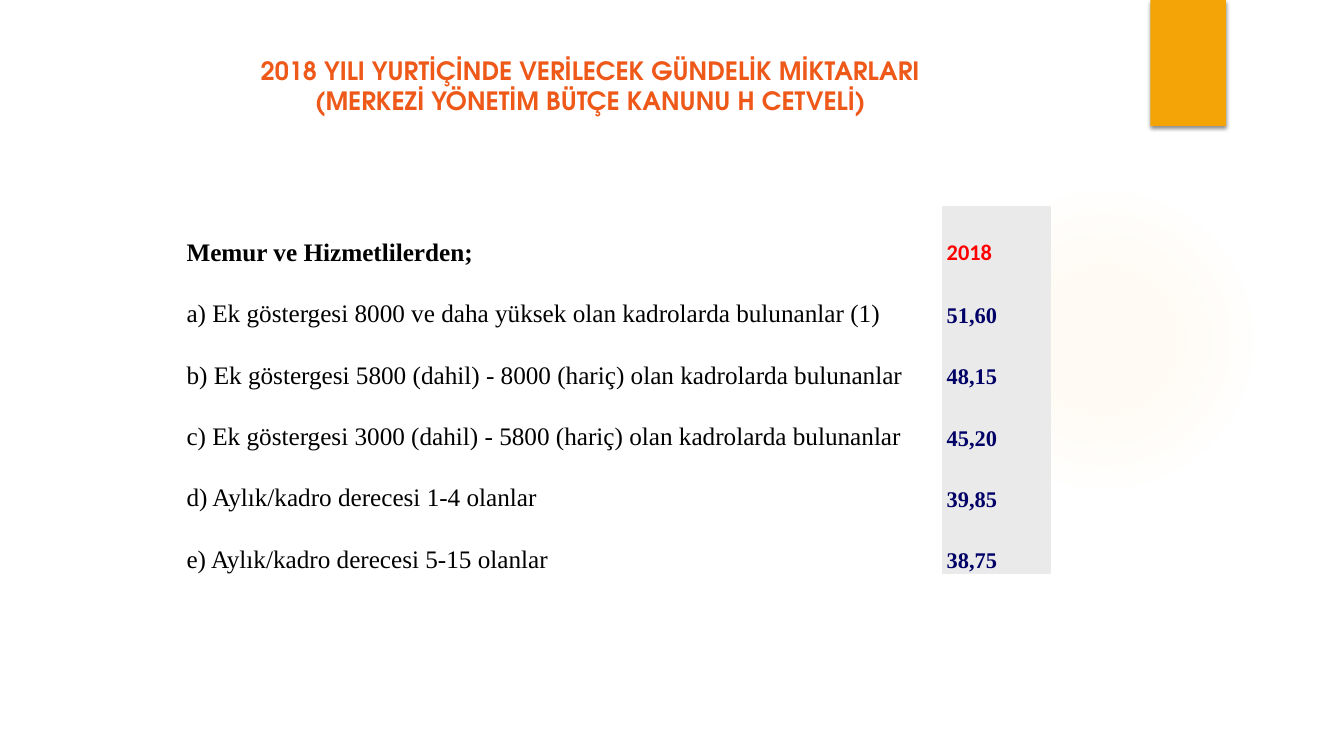
import pptx
import pptx.util
import pptx.dml.color
import pptx.enum.shapes
import pptx.enum.text
import pptx.oxml
import pptx.oxml.ns

Inches = pptx.util.Inches
Pt = pptx.util.Pt
MSO_SHAPE = pptx.enum.shapes.MSO_SHAPE
ANCHOR = pptx.enum.text.MSO_ANCHOR
NS = pptx.oxml.ns.nsdecls("a")
COLORS = {
    "title": "EE5818",
    "ribbon": "F5A408",
    "glow": "FAC96A",
    "band": "EAEAEA",
    "label": "000000",
    "year": "FF0000",
    "amount": "000066",
    "shadow": "000000",
}
NO_STYLE = "{2D5ABB26-0587-4C30-8999-92F81FD0307C}"


def rgb(name):
    return pptx.dml.color.RGBColor.from_string(COLORS[name])


def set_font(paragraph, face, size, color, bold):
    paragraph.font.name = face
    paragraph.font.size = Pt(size)
    paragraph.font.bold = bold
    paragraph.font.color.rgb = rgb(color)


deck = pptx.Presentation()
deck.slide_width = Inches(13.33)
deck.slide_height = Inches(7.5)
slide = deck.slides.add_slide(deck.slide_layouts[5])

glow = slide.shapes.add_shape(MSO_SHAPE.OVAL, Inches(9.41), Inches(1.83), Inches(3.08), Inches(3.08))
glow.shadow.inherit = False
glow.line.fill.background()
stops = "".join(
    f'<a:gs pos="{position * 1000}"><a:srgbClr val="{COLORS["glow"]}">'
    f'<a:alpha val="{opacity * 1000}"/></a:srgbClr></a:gs>'
    for position, opacity in [(0, 7), (36, 6), (69, 0)]
)
glow_fill = pptx.oxml.parse_xml(
    f'<a:gradFill {NS} rotWithShape="1"><a:gsLst>{stops}</a:gsLst><a:path path="circle">'
    '<a:fillToRect l="50000" t="50000" r="50000" b="50000"/></a:path></a:gradFill>'
)
glow.element.spPr.find(pptx.oxml.ns.qn("a:prstGeom")).addnext(glow_fill)

ribbon = slide.shapes.add_shape(MSO_SHAPE.RECTANGLE, Inches(11.41), 0, Inches(0.75), Inches(1.25))
ribbon.shadow.inherit = False
ribbon.fill.solid()
ribbon.fill.fore_color.rgb = rgb("ribbon")
ribbon.line.fill.background()
ribbon_shadow = pptx.oxml.parse_xml(
    f'<a:outerShdw {NS} blurRad="{Pt(3)}" dist="{Pt(2)}" dir="5400000" rotWithShape="0">'
    f'<a:srgbClr val="{COLORS["shadow"]}"><a:alpha val="45000"/></a:srgbClr></a:outerShdw>'
)
ribbon.element.spPr.find(pptx.oxml.ns.qn("a:effectLst")).append(ribbon_shadow)

title = slide.shapes.title
title.left, title.top, title.width, title.height = Inches(0.71), Inches(0.5), Inches(10.29), Inches(0.84)
title.text_frame.text = (
    "2018 YILI YURTİÇİNDE VERİLECEK GÜNDELİK MİKTARLARI\v"
    "(MERKEZİ YÖNETİM BÜTÇE KANUNU H CETVELİ)"
)
title.text_frame.word_wrap = True
title.text_frame.auto_size = pptx.enum.text.MSO_AUTO_SIZE.NONE
title.text_frame.vertical_anchor = ANCHOR.TOP
heading = title.text_frame.paragraphs[0]
heading.alignment = pptx.enum.text.PP_ALIGN.CENTER
set_font(heading, "TeX Gyre Adventor", 18, "title", True)

allowances = [
    ("Memur ve Hizmetlilerden;", "2018"),
    ("a) Ek göstergesi 8000 ve daha yüksek olan kadrolarda bulunanlar (1)", "51,60"),
    ("b) Ek göstergesi 5800 (dahil) - 8000 (hariç) olan kadrolarda bulunanlar", "48,15"),
    ("c) Ek göstergesi 3000 (dahil) - 5800 (hariç) olan kadrolarda bulunanlar", "45,20"),
    ("d) Aylık/kadro derecesi 1-4 olanlar", "39,85"),
    ("e) Aylık/kadro derecesi 5-15 olanlar", "38,75"),
]
allowance_table = slide.shapes.add_table(
    len(allowances), 2, Inches(1.8), Inches(2.04), Inches(8.62), Inches(3.65)
).table
allowance_table.first_row = False
allowance_table.horz_banding = False
allowance_table._tbl.tblPr.find(pptx.oxml.ns.qn("a:tableStyleId")).text = NO_STYLE
allowance_table.columns[0].width = Inches(7.54)
allowance_table.columns[1].width = Inches(1.08)

for row, entry in enumerate(allowances):
    for column, text in enumerate(entry):
        cell = allowance_table.cell(row, column)
        cell.text = text
        cell.vertical_anchor = ANCHOR.BOTTOM
        cell.margin_left = cell.margin_right = Inches(0.05)
        cell.margin_top = cell.margin_bottom = 0
        paragraph = cell.text_frame.paragraphs[0]
        paragraph.line_spacing = 1.07
        if column == 0:
            cell.fill.background()
            set_font(paragraph, "Times New Roman", 18, "label", row == 0)
        else:
            cell.fill.solid()
            cell.fill.fore_color.rgb = rgb("band")
            face, color = ("Calibri", "year") if row == 0 else ("Times New Roman", "amount")
            set_font(paragraph, face, 16, color, True)

deck.save("out.pptx")
